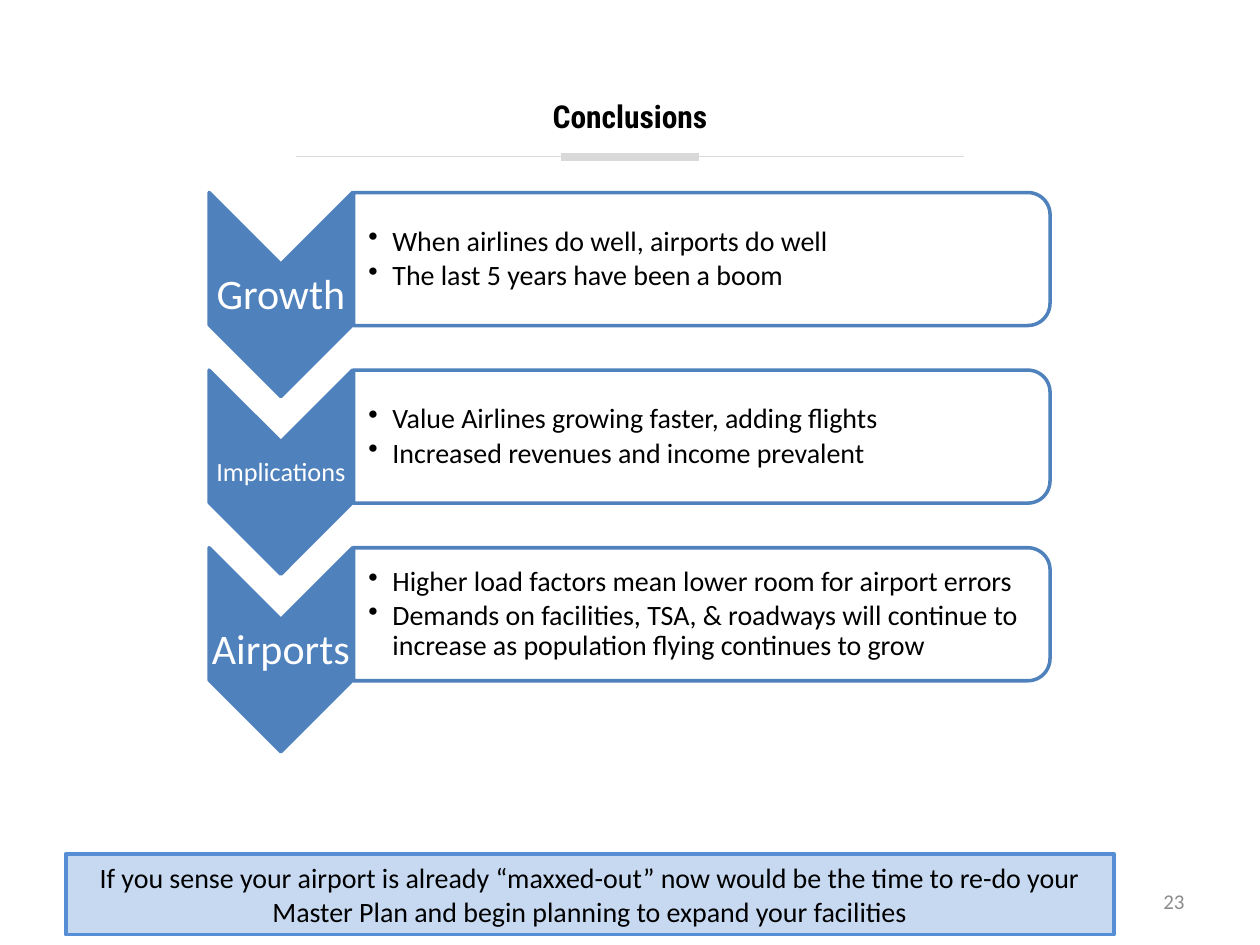
from dataclasses import dataclass

from lxml import etree
from pptx import Presentation
from pptx.dml.color import RGBColor
from pptx.enum import shapes, text
from pptx.oxml.ns import qn
from pptx.util import Pt

SHAPE = shapes.MSO_SHAPE
ALIGN = text.PP_ALIGN


@dataclass(frozen=True)
class Theme:
    black: str = "000000"
    white: str = "FFFFFF"
    blue: str = "4F81BD"
    pale_blue: str = "C6D9F1"
    edge_blue: str = "558ED5"
    rule_gray: str = "D9D9D9"
    number_gray: str = "8C8C8C"
    heading_font: str = "Roboto Condensed"
    body_font: str = "Calibri"
    title_size: float = 18
    label_size: float = 24
    small_label_size: float = 15
    body_size: float = 16
    number_size: float = 12


THEME = Theme()


def write_text(shape, lines, *, size, color=THEME.black, font=THEME.body_font,
               bold=False, align=ALIGN.LEFT, insets=None, wrap=True,
               line_spacing=None, space_after=None, bullet_indent=None,
               grow=False):
    """Fill a shape with one formatted paragraph per line; sizes are in points."""
    frame = shape.text_frame
    frame.word_wrap = wrap
    frame.vertical_anchor = text.MSO_ANCHOR.MIDDLE
    frame.auto_size = (text.MSO_AUTO_SIZE.SHAPE_TO_FIT_TEXT if grow
                       else text.MSO_AUTO_SIZE.NONE)
    if insets:
        (frame.margin_left, frame.margin_top,
         frame.margin_right, frame.margin_bottom) = map(Pt, insets)
    for index, line in enumerate(lines):
        para = frame.add_paragraph() if index else frame.paragraphs[0]
        para.alignment = align
        if line_spacing:
            para.line_spacing = line_spacing
        if space_after:
            para.space_after = Pt(space_after)
        if bullet_indent:
            add_bullet(para, bullet_indent)
        span = para.add_run()
        span.text = line
        span.font.name, span.font.size, span.font.bold = font, Pt(size), bold
        span.font.color.rgb = RGBColor.from_string(color)


def add_bullet(para, indent):
    para.level = 1
    properties = para._p.get_or_add_pPr()
    properties.set("marL", str(Pt(indent)))
    properties.set("indent", str(-Pt(indent)))
    etree.SubElement(properties, qn("a:buChar"), char="•")


class SlideBuilder:
    def __init__(self, deck, theme):
        self.theme = theme
        self.page = deck.slides.add_slide(deck.slide_layouts[5])

    def title(self, wording, left, top, width, height):
        box = self.page.shapes.title
        box.left, box.top, box.width, box.height = map(Pt, (left, top, width, height))
        write_text(box, [wording], size=self.theme.title_size, bold=True,
                   font=self.theme.heading_font, align=ALIGN.CENTER,
                   insets=(1.5,) * 4, grow=True)

    def text_box(self, lines, left, top, width, height, **style):
        box = self.page.shapes.add_textbox(*map(Pt, (left, top, width, height)))
        write_text(box, lines, **style)

    def rule(self, center, y, length, weight):
        ends = (center - length / 2, y, center + length / 2, y)
        line = self.page.shapes.add_connector(
            shapes.MSO_CONNECTOR.STRAIGHT, *map(Pt, ends))
        line.line.color.rgb = RGBColor.from_string(self.theme.rule_gray)
        line.line.width = Pt(weight)
        etree.SubElement(line._element.spPr, qn("a:effectLst"))

    def shape(self, kind, left, top, width, height, fill, edge, weight, opacity=None):
        box = self.page.shapes.add_shape(kind, *map(Pt, (left, top, width, height)))
        box.shadow.inherit = False
        box.fill.solid()
        box.fill.fore_color.rgb = RGBColor.from_string(fill)
        box.line.color.rgb = RGBColor.from_string(edge)
        box.line.width = Pt(weight)
        if opacity:
            color = box._element.spPr.find(qn("a:solidFill"))[0]
            etree.SubElement(color, qn("a:alpha"), val=str(opacity * 1000))
        return box

    def turned_shape(self, kind, left, top, width, height, *style):
        """Place a shape turned by 90 degrees so that it covers the given area."""
        shift = (width - height) / 2
        box = self.shape(kind, left + shift, top - shift, height, width, *style)
        box.rotation = 90

    def chevron_row(self, top, label, label_size, points):
        theme = self.theme
        self.turned_shape(SHAPE.CHEVRON, 119.5, top, 82, 116.6,
                          theme.blue, theme.blue, 2)
        self.text_box([label], 119.5, top + 41.4, 82, 35.3, size=label_size,
                      color=theme.white, align=ALIGN.CENTER, wrap=False,
                      insets=(1.2,) * 4, line_spacing=0.9)
        self.turned_shape(SHAPE.ROUND_2_SAME_RECTANGLE, 202, top, 398, 76,
                          theme.white, theme.blue, 2, 90)
        self.text_box(points, 202, top + 3.9, 394.4, 68.4, size=theme.body_size,
                      insets=(8.6, 0.8, 0.8, 0.8), line_spacing=0.9,
                      space_after=2.4, bullet_indent=13.7)

    def callout(self, wording, left, top, width, height):
        theme = self.theme
        box = self.shape(SHAPE.RECTANGLE, left, top, width, height,
                         theme.pale_blue, theme.edge_blue, 2.25)
        write_text(box, [wording], size=theme.body_size, align=ALIGN.CENTER,
                   grow=True)


def main():
    deck = Presentation()
    deck.slide_width, deck.slide_height = Pt(720), Pt(540)
    slide = SlideBuilder(deck, THEME)

    slide.title("Conclusions", 0, 54, 720, 24.5)
    slide.rule(360, 89.5, 381.6, 0.25)
    slide.rule(360, 89.5, 79.2, 4.5)
    slide.text_box(["23"], 516, 500.4, 168, 28.8, size=THEME.number_size,
                   color=THEME.number_gray, align=ALIGN.RIGHT)

    rows = [
        ("Growth", THEME.label_size,
         ["When airlines do well, airports do well",
          "The last 5 years have been a boom"]),
        ("Implications", THEME.small_label_size,
         ["Value Airlines growing faster, adding flights",
          "Increased revenues and income prevalent"]),
        ("Airports", THEME.label_size,
         ["Higher load factors mean lower room for airport errors",
          "Demands on facilities, TSA, & roadways will continue to increase "
          "as population flying continues to grow"]),
    ]
    for index, row in enumerate(rows):
        slide.chevron_row(110 + index * 101.5, *row)

    slide.callout("If you sense your airport is already “maxxed-out” now would be "
                  "the time to re-do your Master Plan and begin planning to expand "
                  "your facilities", 37.5, 488, 599, 46)
    deck.save("out.pptx")


if __name__ == "__main__":
    main()
